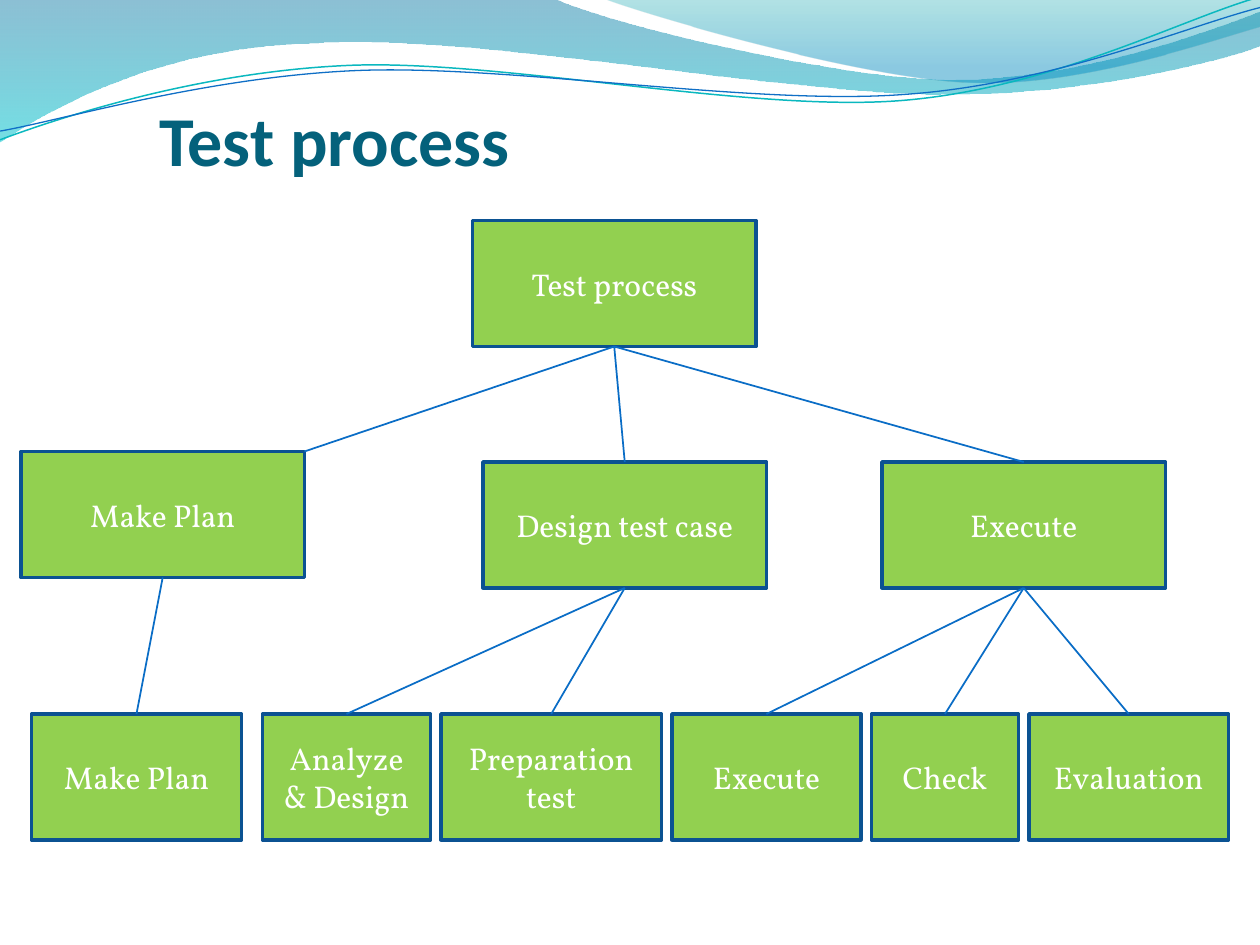
import pptx
import pptx.util
import pptx.dml.color
import pptx.enum.shapes
import pptx.enum.text
import pptx.oxml.ns
from lxml import etree

Pt = pptx.util.Pt
qn = pptx.oxml.ns.qn
ALIGN = pptx.enum.text.PP_ALIGN
ANCHOR = pptx.enum.text.MSO_ANCHOR

COLORS = {
    "title": "04617B", "box": "92D050", "box_line": "0B5292",
    "link": "0A6DC6", "white": "FFFFFF",
    "wave_top": "0074A1", "wave_bottom": "00C6CF",
    "crest_top": "00A1A9", "crest_bottom": "008BBF",
    "teal_line": "0AB8BF", "blue_line": "0F6FC6",
}
BOX_H = 72

# Each path is a list of segments: one point is a straight line, three are a Bezier curve.
WAVE = [
    [(0, 0)], [(316.8, -0.7)],
    [(342.7, 12.2), (478.1, 45.4), (545.8, 45.4)],
    [(614.2, 45.4), (689.8, 18.7), (720, 6.5)],
    [(720.7, 25.9)],
    [(707.8, 31.7), (626.4, 54.7), (537.1, 54)],
    [(447.8, 54), (275, 20.2), (185, 24.5)],
    [(92.9, 25.9), (33.1, 59.8), (-0.7, 81.4)],
    [(0, 0)],
]
CREST = [
    [(344.9, -0.7)],
    [(366.5, 7.9), (491, 44.6), (553.7, 46.8)],
    [(616.3, 49.7), (691.9, 23), (720, 15.1)],
    [(720, 0)],
    [(344.9, -0.7)],
]
TEAL_LINE = [
    [(0, 79.9)],
    [(34.6, 67), (113.8, 41), (199.4, 37.4)],
    [(284.4, 33.8), (427, 64.1), (513.4, 57.6)],
    [(599.8, 51.1), (675.4, 10.8), (718.6, -1.4)],
]
BLUE_LINE = [
    [(0, 74.9)],
    [(33.8, 69.1), (118.1, 43.9), (203.8, 40.3)],
    [(290.2, 36.7), (429.8, 60.5), (516.2, 54)],
    [(601.9, 48.2), (677.5, 15.1), (720, 4.3)],
]


def rgb(name):
    return pptx.dml.color.RGBColor.from_string(COLORS[name])


def write(tf, text, font="Vollkorn", size=18, color="white", bold=False,
          align=ALIGN.CENTER, anchor=ANCHOR.MIDDLE):
    tf.word_wrap = True
    tf.vertical_anchor = anchor
    p = tf.paragraphs[0]
    p.alignment = align
    r = p.add_run()
    r.text = text
    r.font.name, r.font.size, r.font.bold = font, Pt(size), bold
    r.font.color.rgb = rgb(color)


def add_path(s, path, left, top, closed):
    """Build the outline through the end points, then bend its curved segments."""
    segs = [[(Pt(left + x), Pt(top + y)) for x, y in seg] for seg in path]
    fb = s.shapes.build_freeform(*segs[0][0])
    fb.add_line_segments([seg[-1] for seg in segs[1:]], close=closed)
    sp = fb.convert_to_shape()
    sp.shadow.inherit = False
    lines = list(sp._element.spPr.iter(qn("a:lnTo")))
    for line, seg in zip(lines, segs[1:]):
        if len(seg) == 3:
            curve = etree.Element(qn("a:cubicBezTo"))
            for x, y in seg:
                etree.SubElement(curve, qn("a:pt"), x=str(x - sp.left), y=str(y - sp.top))
            line.getparent().replace(line, curve)
    return sp


def add_band(s, path, left, top, stops):
    """Draw a filled wave; stops are (position, colour, opacity in percent)."""
    sp = add_path(s, path, left, top, True)
    sp.line.fill.background()
    sp.fill.gradient()
    sp.fill.gradient_angle = 270
    for stop, (pos, color, _) in zip(sp.fill.gradient_stops, stops):
        stop.position = pos
        stop.color.rgb = rgb(color)
    for clr, (_, _, opacity) in zip(sp._element.spPr.iter(qn("a:srgbClr")), stops):
        etree.SubElement(clr, qn("a:alpha"), val=str(opacity * 1000))


def add_header(s, left, top):
    add_band(s, WAVE, left, top, [(0, "wave_top", 45), (1, "wave_bottom", 55)])
    add_band(s, CREST, left, top, [(0, "crest_top", 30), (0.8, "crest_bottom", 45)])
    for path, color, width in ((TEAL_LINE, "teal_line", 0.85), (BLUE_LINE, "blue_line", 0.75)):
        sp = add_path(s, path, left, top, False)
        sp.fill.background()
        sp.line.color.rgb = rgb(color)
        sp.line.width = Pt(width)


def add_title(s, text, left, top, width, height):
    sp = s.shapes.title
    sp.left, sp.top, sp.width, sp.height = Pt(left), Pt(top), Pt(width), Pt(height)
    tf = sp.text_frame
    tf.margin_left = tf.margin_right = tf.margin_bottom = 0
    write(tf, text, font="Calibri", size=40, color="title", bold=True,
          align=ALIGN.LEFT, anchor=ANCHOR.BOTTOM)


def add_box(s, text, left, top, width):
    sp = s.shapes.add_shape(pptx.enum.shapes.MSO_SHAPE.RECTANGLE,
                            Pt(left), Pt(top), Pt(width), Pt(BOX_H))
    sp.shadow.inherit = False
    sp.fill.solid()
    sp.fill.fore_color.rgb = rgb("box")
    sp.line.color.rgb = rgb("box_line")
    sp.line.width = Pt(2)
    write(sp.text_frame, text)
    return sp


def add_link(s, parent, child, to_corner=False):
    """Join a parent's bottom to a child's top centre, or to its top right corner."""
    cx = s.shapes.add_connector(pptx.enum.shapes.MSO_CONNECTOR.STRAIGHT, 0, 0,
                                child.left + child.width, child.top)
    cx.begin_connect(parent, 2)
    if not to_corner:
        cx.end_connect(child, 0)
    cx.line.color.rgb = rgb("link")
    cx.line.width = Pt(1)
    etree.SubElement(cx._element.spPr, qn("a:effectLst"))


def add_tree(s, left, top):
    wide, leaf_top, gap = 162, top + 282, 6
    root = add_box(s, "Test process", left + 258, top, wide)
    # Branch: text, left, top, then its leaves as (text, width).
    branches = [
        ("Make Plan", 0, 132, [("Make Plan", 120)]),
        ("Design test case", 264, 138, [("Analyze & Design", 96), ("Preparation test", 126)]),
        ("Execute", 492, 138, [("Execute", 108), ("Check", 84), ("Evaluation", 114)]),
    ]
    x = left + gap
    for i, (text, dx, dy, leaves) in enumerate(branches):
        branch = add_box(s, text, left + dx, top + dy, wide)
        add_link(s, root, branch, to_corner=i == 0)
        for leaf_text, width in leaves:
            add_link(s, branch, add_box(s, leaf_text, x, leaf_top, width))
            x += width + gap
        if i == 0:
            x += gap


def main():
    prs = pptx.Presentation()
    prs.slide_width, prs.slide_height = Pt(720), Pt(540)
    s = prs.slides.add_slide(prs.slide_layouts[5])
    add_header(s, 0, 0)
    add_title(s, "Test process", 91, 41.76, 648, 61.2)
    add_tree(s, 12, 126)
    prs.save("out.pptx")


if __name__ == "__main__":
    main()
